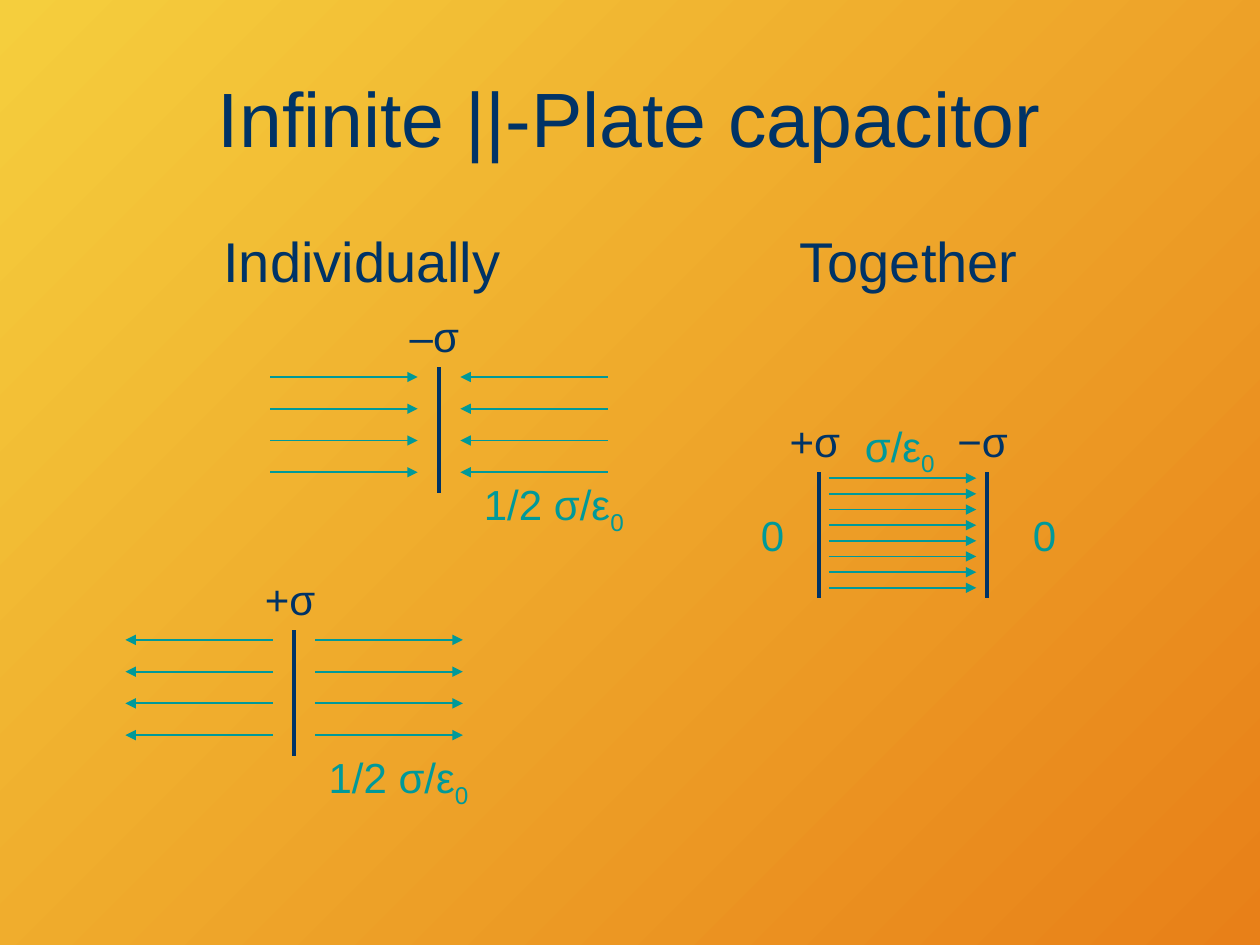
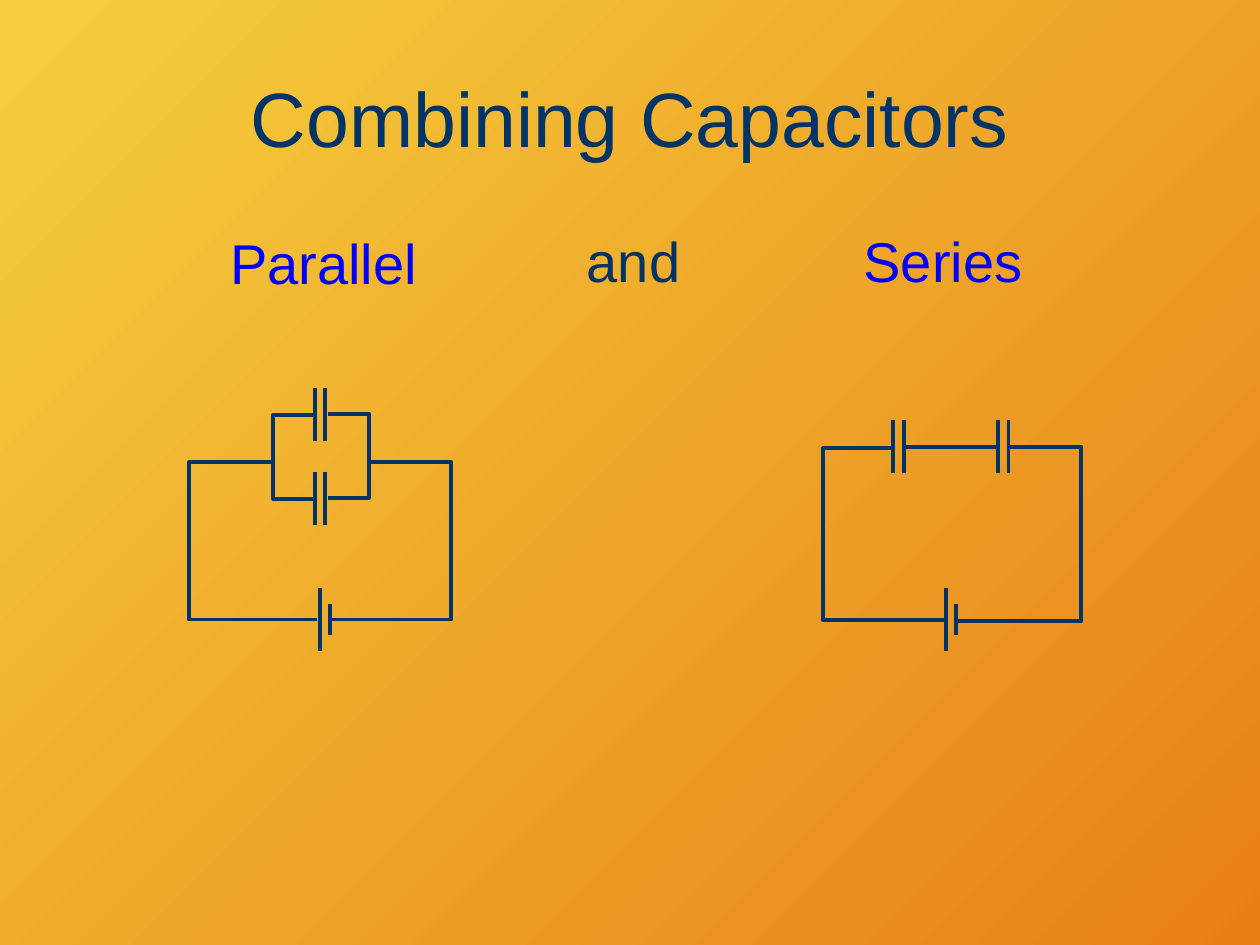
from pptx import Presentation
from pptx.dml.color import RGBColor
from pptx.enum.shapes import MSO_CONNECTOR
from pptx.enum.text import MSO_ANCHOR, PP_ALIGN
from pptx.oxml.ns import qn
from pptx.util import Cm, Pt
from lxml import etree

LINE = MSO_CONNECTOR.STRAIGHT
LEFT, CENTER = PP_ALIGN.LEFT, PP_ALIGN.CENTER
TOP, MIDDLE = MSO_ANCHOR.TOP, MSO_ANCHOR.MIDDLE

FONT = "Arial"
COLORS = {
    "ink": "003366",
    "field": "009999",
    "key": "0000FF",
    "sun": "F5CE3D",
    "rust": "E88018",
}
THICK, THIN = 2.25, 1
PLATE = 2.54   # height of a charged plate
REACH = 2.97   # length of a field arrow
GAP = 0.21     # space between the plates of a circuit symbol


def color(name):
    return RGBColor.from_string(COLORS[name])


def add_slide(deck, title):
    slide = deck.slides.add_slide(deck.slide_layouts[6])
    fill = slide.background.fill
    fill.gradient()
    fill.gradient_angle = 315
    for stop, spot, name in zip(fill.gradient_stops, (0, 1), ("sun", "rust")):
        stop.position = spot
        stop.color.rgb = color(name)
    add_text(slide.shapes, title, 1.27, 0.76, 22.86, 3.18, 44,
             align=CENTER, anchor=MIDDLE)
    return slide.shapes


def add_text(shapes, text, x, y, w, h, size, tint="ink", align=LEFT,
             anchor=TOP, wrap=True, sub=""):
    """Add a one-line text box; sub is set as a subscript after the text."""
    box = shapes.add_textbox(Cm(x), Cm(y), Cm(w), Cm(h))
    frame = box.text_frame
    frame.word_wrap = wrap
    frame.vertical_anchor = anchor
    para = frame.paragraphs[0]
    para.alignment = align
    para.font.name = FONT
    para.font.size = Pt(size)
    para.font.color.rgb = color(tint)
    para.add_run().text = text
    if sub:
        low = para.add_run()
        low.text = sub
        low.font._element.set("baseline", "-25000")


def add_line(shapes, x1, y1, x2, y2, tint="ink", width=THICK):
    line = shapes.add_connector(LINE, Cm(x1), Cm(y1), Cm(x2), Cm(y2))
    line.line.color.rgb = color(tint)
    line.line.width = Pt(width)
    etree.SubElement(line._element.spPr, qn("a:effectLst"))
    return line


def add_arrow(shapes, x1, x2, y):
    line = add_line(shapes, x1, y, x2, y, "field", THIN)
    etree.SubElement(line.line._get_or_add_ln(), qn("a:tailEnd"),
                     type="triangle")


def add_plate(shapes, x, y, sign):
    add_line(shapes, x, y, x, y + PLATE)
    add_text(shapes, sign, x - 0.84, y - 1.27, 1.65, 1.29, 24, wrap=False)


def add_sheet(shapes, x, y, sign, inward, value):
    """Draw one charged plate with its field on both sides."""
    group = shapes.add_group_shape().shapes
    add_plate(group, x, y, sign)
    for row in range(4):
        level = y + 0.2 + 0.64 * row
        for side in (1, -1):
            ends = [x + side * 0.43, x + side * (0.43 + REACH)]
            if inward:
                ends.reverse()
            add_arrow(group, *ends, level)
    add_text(group, " 1/2 σ/ε", *value, 3.86, 1.27, 24, "field", sub="0")


def add_pair(shapes, x, y):
    """Draw two opposite plates with the field between them."""
    group = shapes.add_group_shape().shapes
    add_plate(group, x, y, "+σ")
    add_plate(group, x + 3.38, y, "−σ")
    for row in range(8):
        add_arrow(group, x + 0.2, x + 0.2 + REACH, y + 0.12 + 2.21 * row / 7)
    add_text(group, "σ/ε", x + 0.46, y - 1.17, 2.34, 1.27, 24, "field",
             CENTER, sub="0")
    for left in (x - 1.47, x + 4.01):
        add_text(group, "0", left, y + 0.63, 1.07, 1.27, 24, "field", CENTER)


def add_cap(shapes, x, y):
    for left in (x, x + GAP):
        add_line(shapes, left, y, left, y + 1.07)


def add_cell(shapes, x):
    add_line(shapes, x, 11.86, x, 13.13)
    add_line(shapes, x + GAP, 12.17, x + GAP, 12.8)


def add_wire(shapes, start, low, side, high, end):
    """Draw a bracket: along low to side, up to high, then along to end."""
    pen = shapes.build_freeform(Cm(start), Cm(low))
    spots = [(side, low), (side, high), (end, high)]
    pen.add_line_segments([(Cm(x), Cm(y)) for x, y in spots], close=False)
    wire = pen.convert_to_shape()
    wire.shadow.inherit = False
    wire.fill.background()
    wire.line.color.rgb = color("ink")
    wire.line.width = Pt(THICK)


def add_circuit(shapes, name, spot, width, cell, caps, wires):
    group = shapes.add_group_shape().shapes
    add_text(group, name, *spot, width, 1.6, 32, "key", wrap=False)
    add_cell(group, cell)
    for cap in caps:
        add_cap(group, *cap)
    for wire in wires:
        add_wire(group, *wire)
    return group


def draw_plates(deck):
    shapes = add_slide(deck, "Infinite ||-Plate capacitor")
    for text, x in (("Individually", 3.59), ("Together", 14.61)):
        add_text(shapes, text, x, 4.45, 7.42, 1.7, 32, align=CENTER)
    add_sheet(shapes, 8.85, 7.4, "–σ", True, (9.27, 9.53))
    add_sheet(shapes, 5.93, 12.7, "+σ", False, (6.14, 15.03))
    add_pair(shapes, 16.51, 9.52)


def draw_circuits(deck):
    shapes = add_slide(deck, "Combining Capacitors")
    add_text(shapes, "and", 11.58, 4.45, 2.39, 1.6, 32, wrap=False)
    add_circuit(shapes, "Parallel", (4.39, 4.49), 4.27, 6.45,
                [(6.35, 7.82), (6.35, 9.52)],
                [(6.32, 10.06, 5.51, 8.36, 6.32),
                 (6.61, 10.04, 7.44, 8.34, 6.61),
                 (6.4, 12.49, 3.81, 9.32, 5.51),
                 (6.65, 12.49, 9.1, 9.32, 7.42)])
    series = add_circuit(shapes, "Series", (17.16, 4.45), 3.71, 19.07,
                         [(18.01, 8.46), (20.12, 8.46)],
                         [(19.07, 12.5, 16.59, 9.04, 17.98),
                          (19.25, 12.52, 21.8, 9.02, 20.35)])
    add_line(series, 18.22, 9.02, 20.12, 9.02)


def main():
    deck = Presentation()
    deck.slide_width, deck.slide_height = Cm(25.4), Cm(19.05)
    draw_plates(deck)
    draw_circuits(deck)
    deck.save("out.pptx")


if __name__ == "__main__":
    main()
